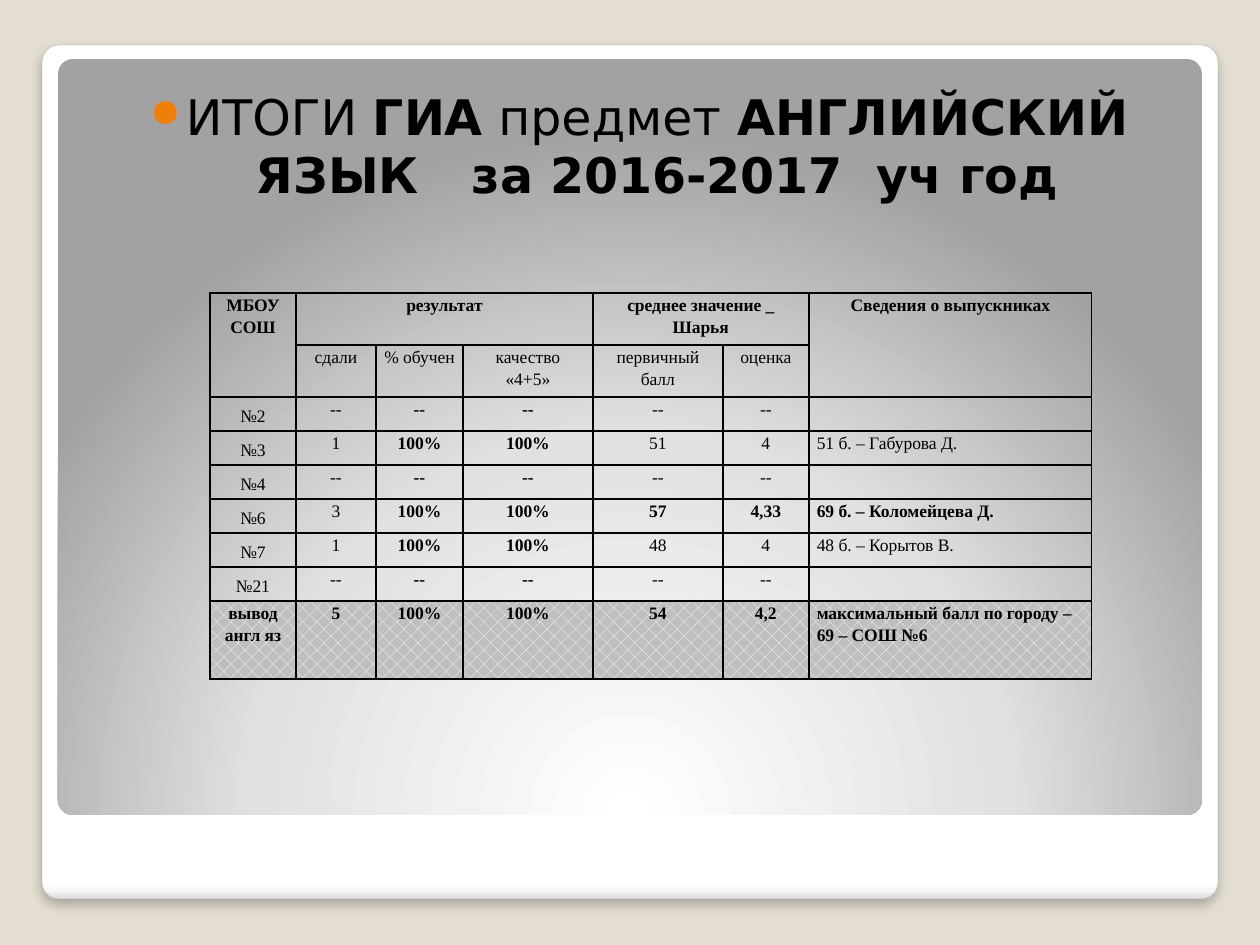
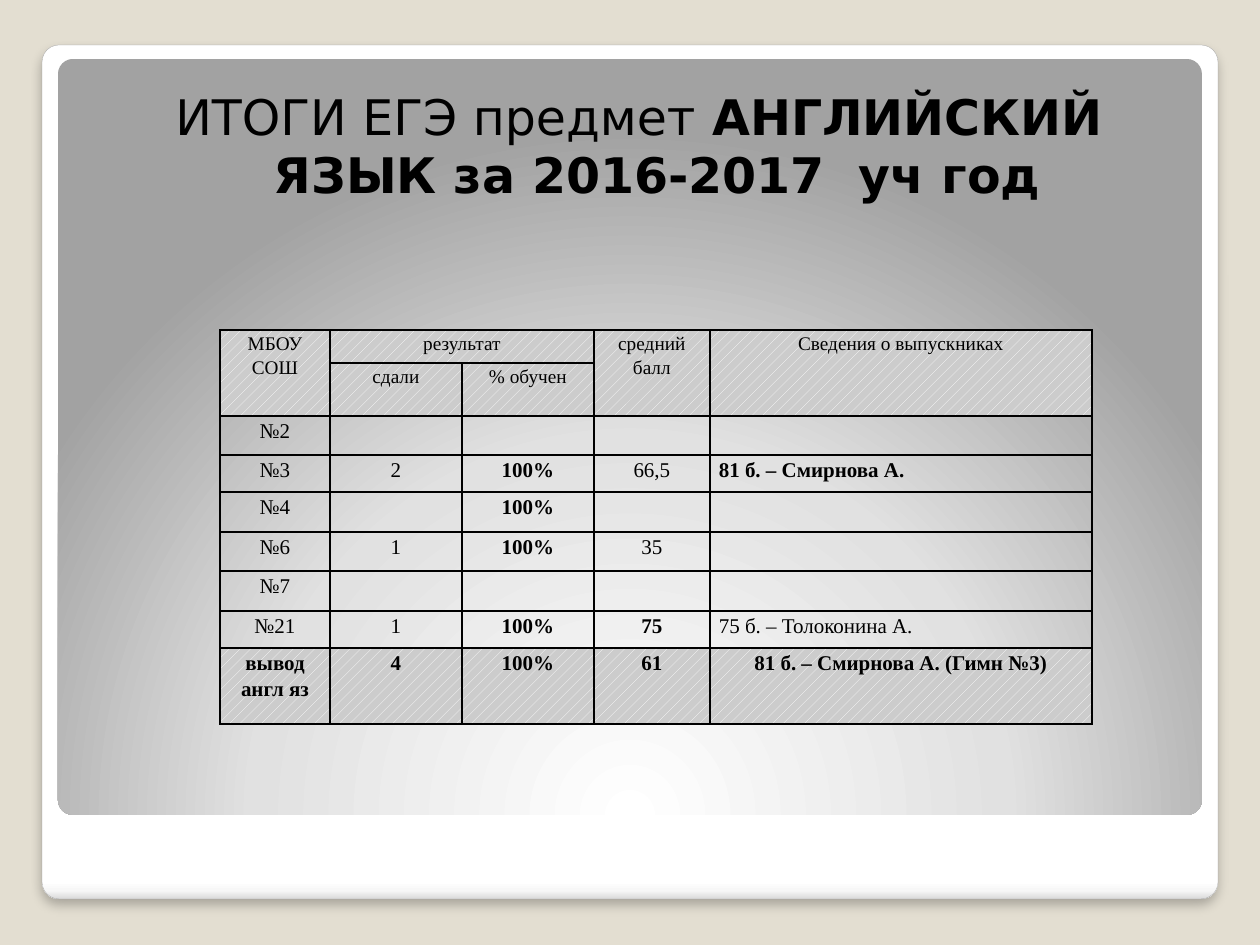
from lxml.etree import SubElement
from pptx import Presentation
from pptx.dml.color import RGBColor
from pptx.enum.dml import MSO_PATTERN
from pptx.enum.shapes import MSO_SHAPE
from pptx.enum.text import PP_ALIGN
from pptx.oxml import parse_xml
from pptx.oxml.ns import nsdecls, qn
from pptx.util import Emu, Pt

COLORS = {
    "background": "E3DED1", "frame_line": "A4A4A4", "bullet": "F07F09",
    "text": "000000", "hatch": "FFFFFF", "exam_total": "BFBFBF", "state_total": "CCCCCC",
}
TITLE_FONT, TABLE_FONT = "DejaVu Sans", "Times New Roman"

# left, top, width, height, gradient stops, gradient direction
PANELS = [
    (42, 45, 1176, 854, [(0, "FFFFFF"), (98, "FFFFFF"), (99, "F7F7F7"), (100, "DADADA")],
     '<a:lin ang="5400000" scaled="0"/>'),
    (58, 59, 1144, 756, [(0, "FFFFFF"), (55, "E1E1E1"), (100, "A2A2A2")],
     '<a:path path="circle"><a:fillToRect l="50000" t="175000" r="50000" b="-75000"/></a:path>'),
]

# Cell text: "*" marks bold, "<" marks left alignment, a line break starts a paragraph
PAGES = [
    {
        "title": [("ИТОГИ ", False), ("ГИА", True), (" предмет", False),
                  (" АНГЛИЙСКИЙ ЯЗЫК\tза 2016-2017  уч год", True)],
        "bullet": True,
        "left": 210, "top": 293, "inset": 8, "size": 10, "number_spacing": 1.5,
        "columns": [86, 80, 87, 130, 130, 86, 283],
        "rows": [52, 52] + [34] * 6 + [78],
        "spans": [(0, 0, 1, 0), (0, 1, 0, 3), (0, 4, 0, 5), (0, 6, 1, 6)],
        "pattern": MSO_PATTERN.PERCENT_25, "shade": "exam_total", "shaded_rows": [8],
        "cells": [
            ["*МБОУ СОШ", "*результат", "", "", "*среднее значение _ Шарья", "",
             "*Сведения о выпускниках"],
            ["", "сдали", "% обучен", "качество\n«4+5»", "первичный балл", "оценка", ""],
            ["№2", "--", "*--", "*--", "--", "--", ""],
            ["№3", "1", "*100%", "*100%", "51", "4", "<51 б. – Габурова Д."],
            ["№4", "--", "*--", "*--", "--", "--", ""],
            ["№6", "3", "*100%", "*100%", "*57", "*4,33", "<*69 б. – Коломейцева Д."],
            ["№7", "1", "*100%", "*100%", "48", "4", "<48 б. – Корытов В."],
            ["№21", "--", "*--", "*--", "--", "--", ""],
            ["*вывод\nангл яз", "*5", "*100%", "*100%", "*54", "*4,2",
             "<*максимальный балл по городу – 69 – СОШ №6"],
        ],
    },
    {
        "title": [("ИТОГИ ЕГЭ предмет", False),
                  (" АНГЛИЙСКИЙ ЯЗЫК за 2016-2017  уч год", True)],
        "bullet": False,
        "left": 220, "top": 330, "inset": 9, "size": 12, "number_spacing": 1.15,
        "columns": [110, 132, 132, 116, 382],
        "rows": [33, 50, 39, 37, 40, 39, 40, 37, 76],
        "spans": [(0, 0, 1, 0), (0, 1, 0, 2), (0, 3, 1, 3), (0, 4, 1, 4)],
        "pattern": MSO_PATTERN.PERCENT_20, "shade": "state_total", "shaded_rows": [0, 1, 8],
        "cells": [
            ["МБОУ СОШ", "результат", "", "средний балл", "Сведения о выпускниках"],
            ["", "сдали", "% обучен", "", ""],
            ["№2", "", "", "", ""],
            ["№3", "2", "*100%", "66,5", "<*81 б. – Смирнова А."],
            ["№4", "", "*100%", "", ""],
            ["№6", "1", "*100%", "35", ""],
            ["№7", "", "", "", ""],
            ["№21", "1", "*100%", "*75", "<75 б. – Толоконина А."],
            ["*вывод\nангл яз", "*4", "*100%", "*61", "*81 б. – Смирнова А. (Гимн №3)"],
        ],
    },
]


def px(length):
    return Emu(round(length * 914400 / 126))


def add_span(para, text, font, size, bold):
    span = para.add_run()
    span.text = text
    span.font.name = font
    span.font.size = Pt(size)
    span.font.bold = bold
    span.font.color.rgb = RGBColor.from_string(COLORS["text"])


deck = Presentation()
deck.slide_width, deck.slide_height = px(1260), px(945)
backdrop = deck.slide_master.background.fill
backdrop.solid()
backdrop.fore_color.rgb = RGBColor.from_string(COLORS["background"])

for content in PAGES:
    page = deck.slides.add_slide(deck.slide_layouts[6])

    # White frame with a shadow, then the grey panel inside it
    for left, top, width, height, stops, direction in PANELS:
        panel = page.shapes.add_shape(
            MSO_SHAPE.ROUNDED_RECTANGLE, px(left), px(top), px(width), px(height))
        panel.adjustments[0] = 0.02
        panel.shadow.inherit = False
        panel.line.fill.background()
        stop_xml = "".join(f'<a:gs pos="{position * 1000}"><a:srgbClr val="{color}"/></a:gs>'
                           for position, color in stops)
        gradient = parse_xml(f'<a:gradFill {nsdecls("a")} rotWithShape="1">'
                             f'<a:gsLst>{stop_xml}</a:gsLst>{direction}</a:gradFill>')
        panel._element.spPr.insert(2, gradient)
    frame = page.shapes[0]
    frame.line.color.rgb = RGBColor.from_string(COLORS["frame_line"])
    frame.line.width = Pt(0.16)
    effects = frame._element.spPr.find(qn("a:effectLst"))
    shadow = SubElement(effects, qn("a:outerShdw"), blurRad=str(Pt(6)), dist=str(Pt(4)),
                        dir="5400000", algn="t", rotWithShape="0")
    shadow_color = SubElement(shadow, qn("a:srgbClr"), val="000000")
    SubElement(shadow_color, qn("a:alpha"), val="25000")

    # Title
    title = page.shapes.add_textbox(px(69), px(73), px(1128), px(144)).text_frame
    title.word_wrap = True
    title.margin_left, title.margin_top = px(25), px(13)
    title.margin_right, title.margin_bottom = px(13), px(6)
    para = title.paragraphs[0]
    para.alignment = PP_ALIGN.CENTER
    properties = para._p.get_or_add_pPr()
    properties.set("marL", str(px(36)))
    properties.set("indent", str(px(-36)))
    if content["bullet"]:
        bullet_color = SubElement(properties, qn("a:buClr"))
        SubElement(bullet_color, qn("a:srgbClr"), val=COLORS["bullet"])
        SubElement(properties, qn("a:buSzPct"), val="80000")
        SubElement(properties, qn("a:buChar"), char="●")
    for text, bold in content["title"]:
        add_span(para, text, TITLE_FONT, 28, bold)

    # Results table
    columns, rows = content["columns"], content["rows"]
    table = page.shapes.add_table(
        len(rows), len(columns), px(content["left"]), px(content["top"]),
        px(sum(columns)), px(sum(rows))).table
    table.first_row = table.horz_banding = False
    for column, width in zip(table.columns, columns):
        column.width = px(width)
    for row, height in zip(table.rows, rows):
        row.height = px(height)

    for row_index, texts in enumerate(content["cells"]):
        size = 11 if content["size"] == 12 and row_index < 2 else content["size"]
        for column_index, marked_text in enumerate(texts):
            cell = table.cell(row_index, column_index)
            cell.margin_left = cell.margin_right = px(content["inset"])
            cell.margin_top = cell.margin_bottom = 0
            for side in ("lnL", "lnR", "lnT", "lnB"):
                border = SubElement(cell._tc.get_or_add_tcPr(), qn(f"a:{side}"), w=str(Pt(1)))
                border_fill = SubElement(border, qn("a:solidFill"))
                SubElement(border_fill, qn("a:srgbClr"), val=COLORS["text"])
            if row_index in content["shaded_rows"]:
                cell.fill.patterned()
                cell.fill.pattern = content["pattern"]
                cell.fill.fore_color.rgb = RGBColor.from_string(COLORS["hatch"])
                cell.fill.back_color.rgb = RGBColor.from_string(COLORS[content["shade"]])
            else:
                cell.fill.background()

            text = marked_text.lstrip("<*")
            if not text:
                SubElement(cell.text_frame.paragraphs[0]._p, qn("a:endParaRPr"),
                           sz=str(size * 100))
                continue
            for line_index, line in enumerate(text.split("\n")):
                frame_text = cell.text_frame
                para = frame_text.add_paragraph() if line_index else frame_text.paragraphs[0]
                left_aligned = marked_text.startswith("<")
                para.alignment = PP_ALIGN.LEFT if left_aligned else PP_ALIGN.CENTER
                para.line_spacing = content["number_spacing"] if line.startswith("№") else 1.15
                add_span(para, line, TABLE_FONT, size, "*" in marked_text[:2])

    for first_row, first_column, last_row, last_column in content["spans"]:
        table.cell(first_row, first_column).merge(table.cell(last_row, last_column))

deck.save("out.pptx")
